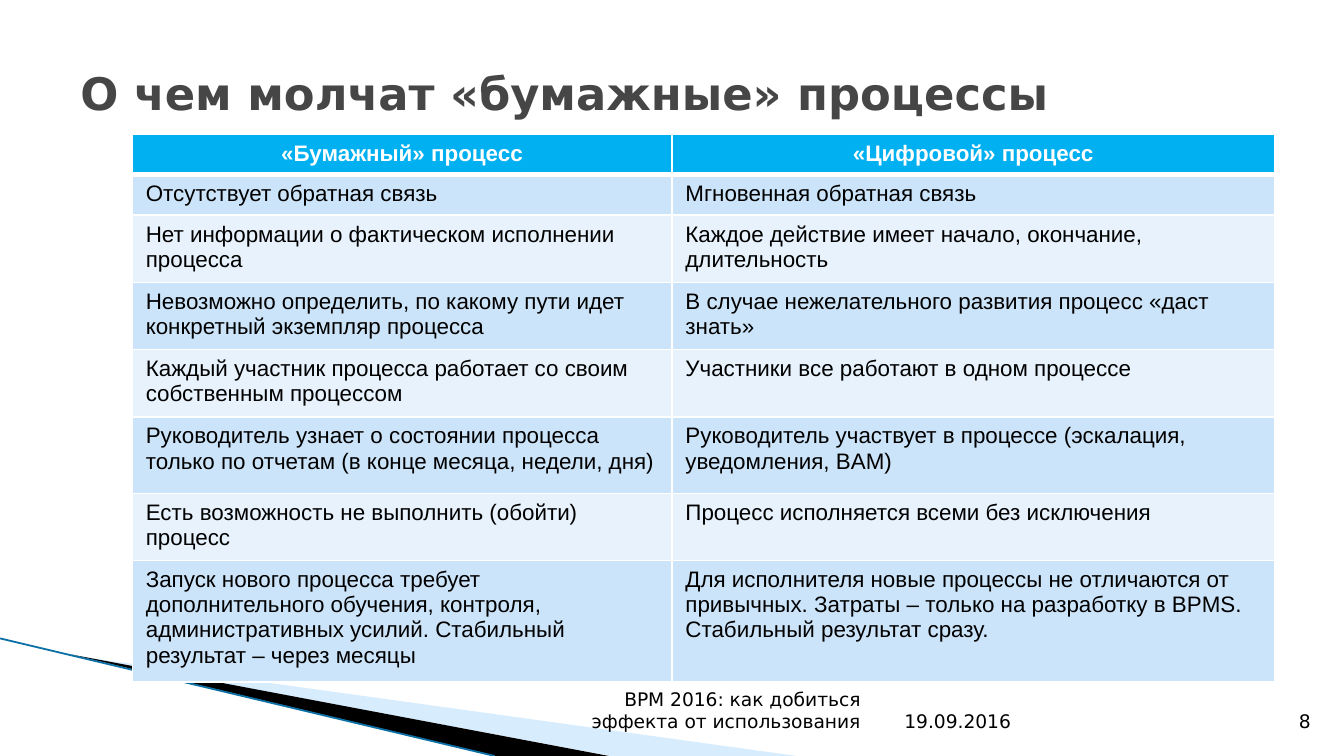
from dataclasses import dataclass

import pptx
import pptx.dml.color
import pptx.enum.shapes
import pptx.enum.text
import pptx.oxml
import pptx.oxml.ns
import pptx.util

Align = pptx.enum.text.PP_ALIGN
Anchor = pptx.enum.text.MSO_ANCHOR

# The slide is a square grid of 100 columns by 56.25 rows
COLUMNS, ROWS = 100, 56.25
UNIT = pptx.util.Inches(0.1)


@dataclass(frozen=True)
class Theme:
    heading_font: str = "DejaVu Sans"
    table_font: str = "Arial"
    title_size: int = 24
    table_size: int = 12
    footer_size: int = 10
    title: str = "464646"
    ink: str = "000000"
    paper: str = "FFFFFF"
    header: str = "00B0F0"
    bands: tuple = ("CCE4F9", "E7F2FC")
    wedge: str = "9BD1FC"
    edge: str = "0B70A5"


def grid(value):
    return pptx.util.Emu(round(value * UNIT))


def rgb(value):
    return pptx.dml.color.RGBColor.from_string(value)


def write(frame, text, *, font, size, color, bold=False, align=Align.LEFT):
    para = frame.paragraphs[0]
    para.alignment = align
    span = para.add_run()
    span.text = text
    span.font.name = font
    span.font.size = pptx.util.Pt(size)
    span.font.bold = bold
    span.font.color.rgb = rgb(color)
    # The paragraph end takes the same size, so that it adds no height
    para._p.get_or_add_endParaRPr().set("sz", str(size * 100))


class Painter:
    def __init__(self, page, theme):
        self.page = page
        self.theme = theme

    def wedge(self, points, color, opacity=100):
        corners = [(grid(x), grid(y)) for x, y in points]
        builder = self.page.shapes.build_freeform(*corners[0], scale=1.0)
        builder.add_line_segments(corners[1:], close=True)
        shape = builder.convert_to_shape()
        shape.shadow.inherit = False
        shape.line.fill.background()
        shape.fill.solid()
        shape.fill.fore_color.rgb = rgb(color)
        if opacity < 100:
            tint = shape._element.spPr.find(".//" + pptx.oxml.ns.qn("a:srgbClr"))
            alpha = pptx.oxml.parse_xml(
                f'<a:alpha {pptx.oxml.ns.nsdecls("a")} val="{opacity * 1000}"/>')
            tint.append(alpha)

    def line(self, start, end, color, width):
        line = self.page.shapes.add_connector(
            pptx.enum.shapes.MSO_CONNECTOR.STRAIGHT, *map(grid, (*start, *end)))
        line.line.color.rgb = rgb(color)
        line.line.width = pptx.util.Pt(width)
        line._element.spPr.append(pptx.oxml.parse_xml(
            f'<a:effectLst {pptx.oxml.ns.nsdecls("a")}/>'))

    def text(self, text, left, top, width, height, *, anchor=Anchor.BOTTOM, **style):
        box = self.page.shapes.add_textbox(*map(grid, (left, top, width, height)))
        frame = box.text_frame
        frame.word_wrap = True
        frame.vertical_anchor = anchor
        write(frame, text, **style)

    def footer(self, text, left, width, align):
        self.text(text, left, 52, width, 3, font=self.theme.heading_font,
                  size=self.theme.footer_size, color=self.theme.ink, align=align)

    def borders(self, cell, **widths):
        properties = cell._tc.get_or_add_tcPr()
        for side in "LRTB":
            width = pptx.util.Pt(widths.get(side, 1))
            properties.append(pptx.oxml.parse_xml(
                f'<a:ln{side} {pptx.oxml.ns.nsdecls("a")} w="{width}"><a:solidFill>'
                f'<a:srgbClr val="{self.theme.paper}"/></a:solidFill></a:ln{side}>'))

    def table(self, rows, left, top, widths, heights):
        theme = self.theme
        table = self.page.shapes.add_table(
            len(rows), len(widths), grid(left), grid(top),
            grid(sum(widths)), grid(sum(heights))).table
        for column, width in zip(table.columns, widths):
            column.width = grid(width)
        for index, (row, height, texts) in enumerate(zip(table.rows, heights, rows)):
            row.height = grid(height)
            is_header = index == 0
            fill = theme.header if is_header else theme.bands[(index - 1) % 2]
            for cell, text in zip(row.cells, texts):
                # A thick rule parts the header from the body
                self.borders(cell, B=3 if is_header else 1, T=3 if index == 1 else 1)
                cell.fill.solid()
                cell.fill.fore_color.rgb = rgb(fill)
                write(cell.text_frame, text, font=theme.table_font,
                      size=theme.table_size, bold=is_header,
                      color=theme.paper if is_header else theme.ink,
                      align=Align.CENTER if is_header else Align.LEFT)


COMPARISON = [
    ("«Бумажный» процесс", "«Цифровой» процесс"),
    ("Отсутствует обратная связь", "Мгновенная обратная связь"),
    ("Нет информации о фактическом исполнении процесса",
     "Каждое действие имеет начало, окончание, длительность"),
    ("Невозможно определить, по какому пути идет конкретный экземпляр процесса",
     "В случае нежелательного развития процесс «даст знать»"),
    ("Каждый участник процесса работает со своим собственным процессом",
     "Участники все работают в одном процессе"),
    ("Руководитель узнает о состоянии процесса только по отчетам "
     "(в конце месяца, недели, дня)",
     "Руководитель участвует в процессе (эскалация, уведомления, BAM)"),
    ("Есть возможность не выполнить (обойти) процесс",
     "Процесс исполняется всеми без исключения"),
    ("Запуск нового процесса требует дополнительного обучения, контроля, "
     "административных усилий. Стабильный результат – через месяцы",
     "Для исполнителя новые процессы не отличаются от привычных. Затраты – "
     "только на разработку в BPMS. Стабильный результат сразу."),
]


def main():
    deck = pptx.Presentation()
    deck.slide_width = grid(COLUMNS)
    deck.slide_height = grid(ROWS)
    theme = Theme()
    painter = Painter(deck.slides.add_slide(deck.slide_layouts[6]), theme)

    # Corner decoration
    painter.wedge([(5.5, 48.8), (59.2, ROWS), (45.4, ROWS)], theme.wedge, opacity=40)
    painter.wedge([(5.3, 48.7), (45.3, ROWS), (36.9, ROWS)], theme.ink)
    painter.line((0, 47.5), (36.8, ROWS), theme.edge, 0.95)

    # Title
    painter.text("О чем молчат «бумажные» процессы", 5, 1, 90, 11.8,
                 anchor=Anchor.MIDDLE, font=theme.heading_font,
                 size=theme.title_size, color=theme.title, bold=True)

    # Footer
    painter.footer("19.09.2016", 65, 12.5, Align.CENTER)
    painter.footer("BPM 2016: как добиться эффекта от использования",
                   39.3, 25.7, Align.RIGHT)
    painter.footer("8", 93.3, 5.2, Align.RIGHT)

    # Comparison table
    one_line, two_lines, four_lines = 2.85, 4.75, 8.45
    painter.table(COMPARISON, 9.85, 10, widths=(40.15, 44.85),
                  heights=(one_line, one_line, two_lines, two_lines, two_lines,
                           5.7, two_lines, four_lines))

    deck.save("out.pptx")


if __name__ == "__main__":
    main()
